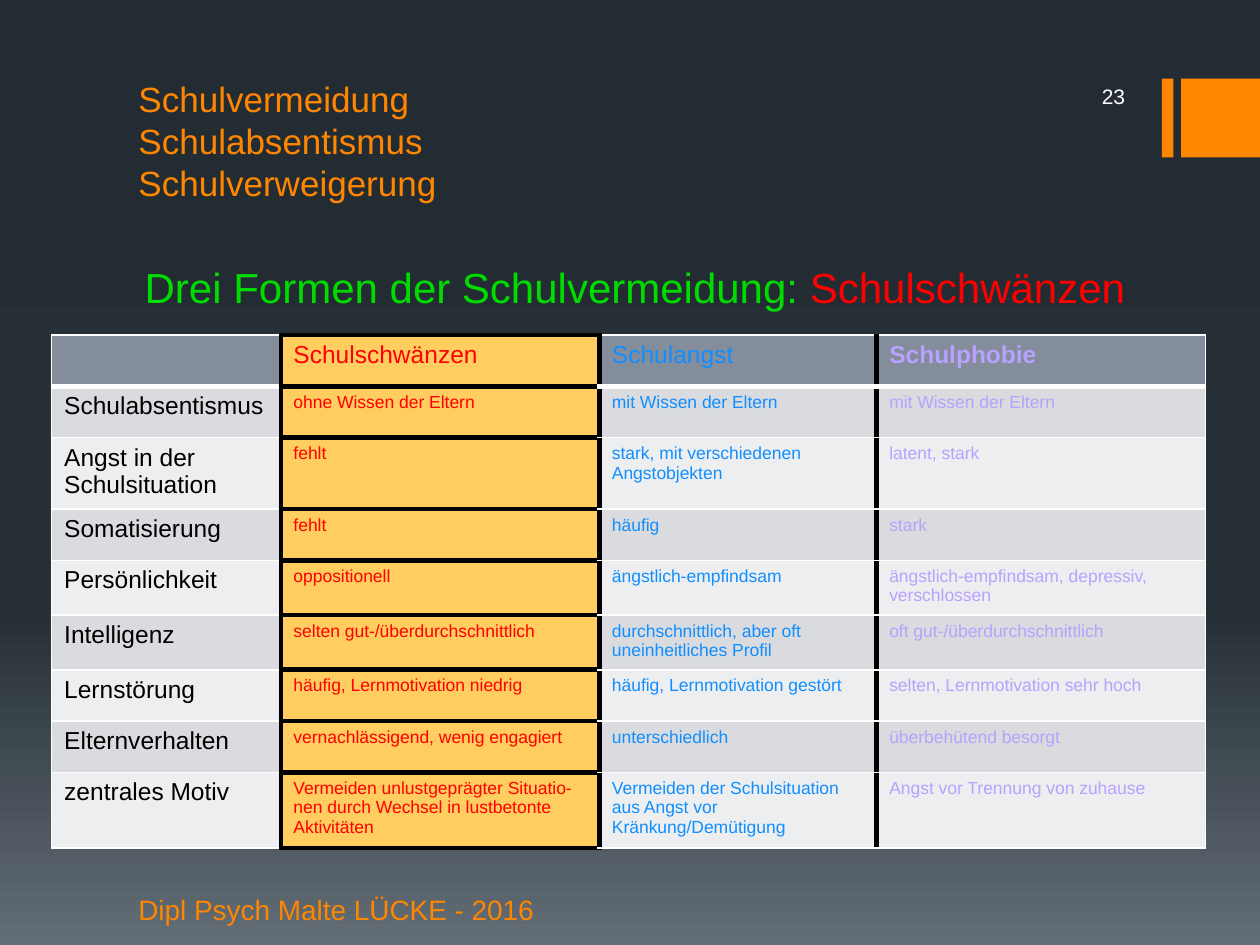
from copy import deepcopy
from dataclasses import dataclass

from lxml.etree import SubElement
from pptx import Presentation
from pptx.dml.color import RGBColor
from pptx.enum.shapes import MSO_SHAPE as SHAPE
from pptx.enum.text import MSO_ANCHOR as ANCHOR, PP_ALIGN as ALIGN
from pptx.oxml.ns import qn
from pptx.util import Pt


@dataclass(frozen=True)
class Theme:
    font: str = "Arial"
    accent: str = "FF8600"
    green: str = "00DC00"
    red: str = "FF0000"
    blue: str = "118EFF"
    violet: str = "B9A1FF"
    black: str = "000000"
    white: str = "FFFFFF"
    highlight: str = "FFCD60"
    header: str = "838D9B"
    bands: tuple = ("EDEEEF", "D9DBDE")
    gradient: tuple = ((0, "242C33"), (0.65, "273037"), (1, "636D76"))
    title: int = 20
    subtitle: int = 24
    footer: int = 16
    label: int = 14
    number: int = 12
    detail: int = 10


T = Theme()
THIN, THICK, FRAME = (T.white, 1), (T.white, 3), (T.black, 3)
COLUMN_EDGES = (THIN, FRAME, FRAME, FRAME, THIN)
COLUMN_COLORS = (T.black, T.red, T.blue, T.violet)
COLUMN_WIDTHS = (131, 182, 158.5, 188)
ROW_HEIGHTS = (29.3, 29.3, 38.7, 29.3, 29.3, 29.3, 29.3, 29.3, 40.7)
HIGHLIGHT_COLUMN = 1
ROWS = (
    ("", "Schulschwänzen", "Schulangst", "Schulphobie"),
    ("Schulabsentismus", "ohne Wissen der Eltern", "mit Wissen der Eltern",
     "mit Wissen der Eltern"),
    ("Angst in der Schulsituation", "fehlt",
     "stark, mit verschiedenen\nAngstobjekten", "latent, stark"),
    ("Somatisierung", "fehlt", "häufig", "stark"),
    ("Persönlichkeit", "oppositionell", "ängstlich-empfindsam",
     "ängstlich-empfindsam, depressiv, verschlossen"),
    ("Intelligenz", "selten gut-/überdurchschnittlich",
     "durchschnittlich, aber oft\nuneinheitliches Profil",
     "oft gut-/überdurchschnittlich"),
    ("Lernstörung", "häufig, Lernmotivation niedrig",
     "häufig, Lernmotivation gestört", "selten, Lernmotivation sehr hoch"),
    ("Elternverhalten", "vernachlässigend, wenig engagiert",
     "unterschiedlich", "überbehütend besorgt"),
    ("zentrales Motiv",
     "Vermeiden unlustgeprägter Situatio-nen durch Wechsel in lustbetonte Aktivitäten",
     "Vermeiden der Schulsituation aus Angst vor Kränkung/Demütigung",
     "Angst vor Trennung von zuhause"),
)


def rgb(color):
    return RGBColor.from_string(color)


def add_run(p, text, size, color, bold=False):
    r = p.add_run()
    r.text = text
    r.font.name = T.font
    r.font.size = Pt(size)
    r.font.bold = bold
    r.font.color.rgb = rgb(color)


def add_text(slide, box, runs, size, anchor=ANCHOR.TOP, align=ALIGN.LEFT,
             inset_top=3.6, indent=0, before=0, spacing=None):
    tf = slide.shapes.add_textbox(*map(Pt, box)).text_frame
    tf.word_wrap = True
    tf.vertical_anchor = anchor
    tf.margin_top = Pt(inset_top)
    p = tf.paragraphs[0]
    p.alignment = align
    p.space_before = Pt(before)
    if spacing:
        p.line_spacing = Pt(spacing)
    if indent:
        p._p.get_or_add_pPr().set("marL", str(Pt(indent)))
    for text, color in runs:
        for i, line in enumerate(text.split("\n")):
            if i:
                p.add_line_break()
            add_run(p, line, size, color)


def fill_background(slide):
    fill = slide.background.fill
    fill.gradient()
    fill.gradient_angle = 270
    stops = slide._element.find(".//" + qn("a:gsLst"))
    stops.insert(1, deepcopy(stops[0]))
    for stop, (position, color) in zip(fill.gradient_stops, T.gradient):
        stop.position = position
        stop.color.rgb = rgb(color)


def add_corner_bars(slide, box):
    left, top, width, height = box
    bar, gap = 6.5, 4.5
    block = bar + gap
    for x, w in ((left, bar), (left + block, width - block)):
        sp = slide.shapes.add_shape(SHAPE.RECTANGLE, Pt(x), Pt(top), Pt(w), Pt(height))
        sp.shadow.inherit = False
        sp.fill.solid()
        sp.fill.fore_color.rgb = rgb(T.accent)
        sp.line.fill.background()


def set_borders(cell, **edges):
    tcPr = cell._tc.get_or_add_tcPr()
    for side in "LRTB":
        color, width = edges[side]
        ln = SubElement(tcPr, qn(f"a:ln{side}"), w=str(Pt(width)))
        SubElement(SubElement(ln, qn("a:solidFill")), qn("a:srgbClr"), val=color)


def row_edge(edge, column):
    if column == HIGHLIGHT_COLUMN:
        return FRAME
    return THICK if edge == 1 else THIN


def format_cell(cell, text, row, column):
    set_borders(cell, L=COLUMN_EDGES[column], R=COLUMN_EDGES[column + 1],
                T=row_edge(row, column), B=row_edge(row + 1, column))
    cell.fill.solid()
    if column == HIGHLIGHT_COLUMN:
        color = T.highlight
    else:
        color = T.bands[row % 2] if row else T.header
    cell.fill.fore_color.rgb = rgb(color)
    size = T.label if row == 0 or column == 0 else T.detail
    tf = cell.text_frame
    for i, line in enumerate(text.split("\n")):
        p = tf.add_paragraph() if i else tf.paragraphs[0]
        add_run(p, line, size, COLUMN_COLORS[column], bold=row == 0 and column == 3)


def add_comparison(slide, box):
    table = slide.shapes.add_table(len(ROWS), len(COLUMN_WIDTHS), *map(Pt, box)).table
    table.first_row = table.horz_banding = False
    for column, width in zip(table.columns, COLUMN_WIDTHS):
        column.width = Pt(width)
    for r, (height, texts) in enumerate(zip(ROW_HEIGHTS, ROWS)):
        table.rows[r].height = Pt(height)
        for c, text in enumerate(texts):
            format_cell(table.cell(r, c), text, r, c)


def build_slide(prs):
    slide = prs.slides.add_slide(prs.slide_layouts[6])
    fill_background(slide)
    add_corner_bars(slide, (664, 45, 56, 45))
    add_text(slide, (72, 43, 353.5, 77),
             [("Schulvermeidung\nSchulabsentismus\nSchulverweigerung", T.accent)],
             T.title, anchor=ANCHOR.BOTTOM, spacing=24)
    add_text(slide, (72, 146, 592.5, 350.5),
             [("Drei Formen der Schulvermeidung: ", T.green), ("Schulschwänzen", T.red)],
             T.subtitle, indent=3.6, before=2)
    add_text(slide, (72, 510, 251.5, 24),
             [("Dipl Psych Malte LÜCKE - 2016", T.accent)], T.footer, inset_top=0)
    add_text(slide, (576, 43, 74, 24), [("23", T.white)], T.number,
             anchor=ANCHOR.MIDDLE, align=ALIGN.RIGHT)
    add_comparison(slide, (29.5, 191.5, sum(COLUMN_WIDTHS), sum(ROW_HEIGHTS)))


def main():
    prs = Presentation()
    prs.slide_width, prs.slide_height = Pt(720), Pt(540)
    build_slide(prs)
    prs.save("out.pptx")


if __name__ == "__main__":
    main()
